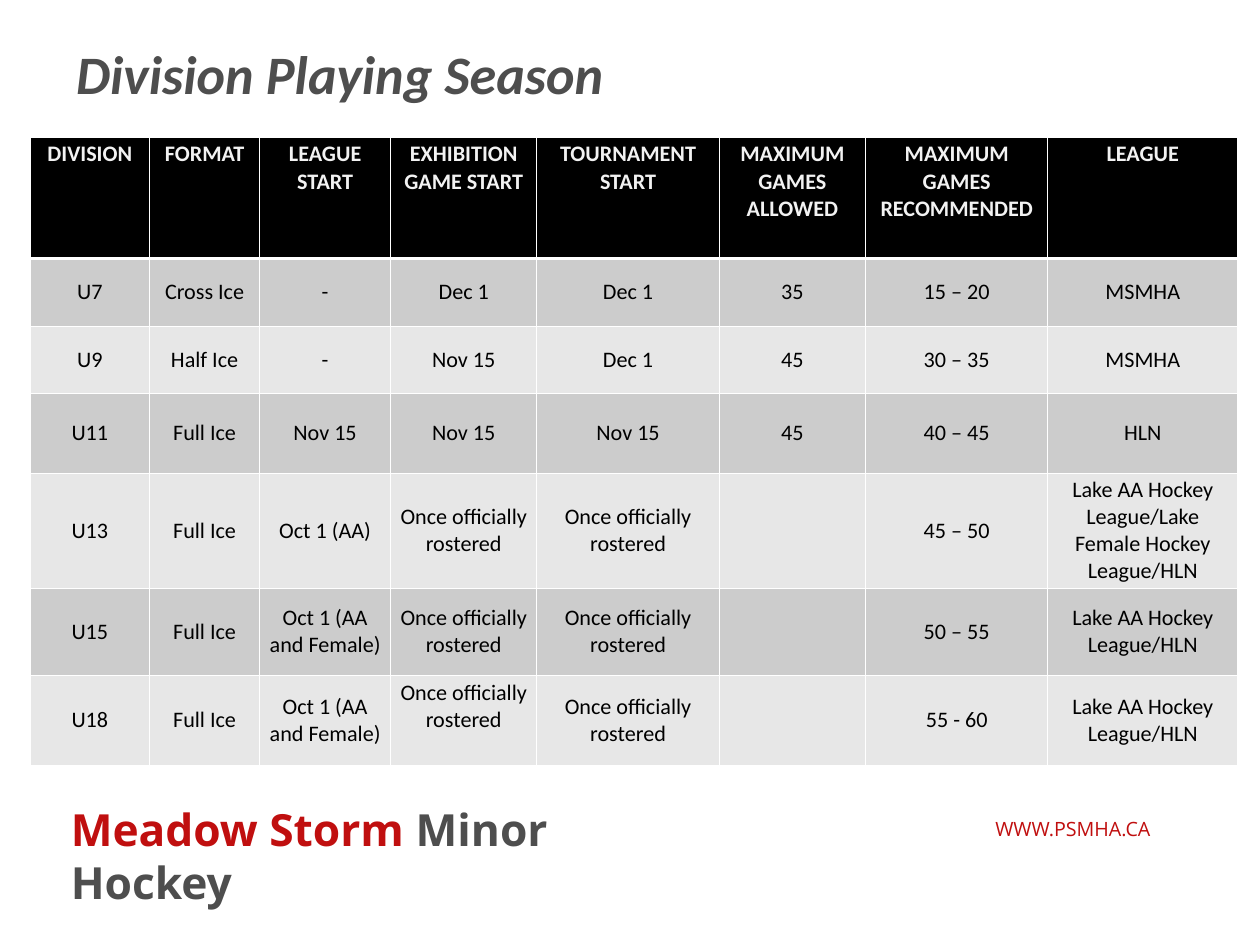
from lxml.etree import SubElement
from pptx import Presentation
from pptx.dml.color import RGBColor
from pptx.enum.text import MSO_ANCHOR as Anchor, MSO_AUTO_SIZE as AutoSize, PP_ALIGN as Align
from pptx.oxml.ns import qn
from pptx.util import Cm, Pt

WHITE = RGBColor(0xFF, 0xFF, 0xFF)
BLACK = RGBColor(0x00, 0x00, 0x00)
OFF_WHITE = RGBColor(0xF2, 0xF2, 0xF2)
DARK_GREY = RGBColor(0x4E, 0x4E, 0x4E)
RED = RGBColor(0xC0, 0x0F, 0x0F)
BANDS = [RGBColor(0xCC, 0xCC, 0xCC), RGBColor(0xE7, 0xE7, 0xE7)]


def add_run(paragraph, text, font_name, size, color, bold=False, italic=False):
    run = paragraph.add_run()
    run.text = text
    run.font.name = font_name
    run.font.size = Pt(size)
    run.font.color.rgb = color
    run.font.bold = bold
    run.font.italic = italic


def set_border(cell, side, width):
    """Draw a white line on one side of a cell: lnL, lnR, lnT or lnB."""
    line = SubElement(cell._tc.get_or_add_tcPr(), qn(f"a:{side}"), w=str(Pt(width)))
    fill = SubElement(line, qn("a:solidFill"))
    SubElement(fill, qn("a:srgbClr"), val=str(WHITE))


prs = Presentation()
prs.slide_width, prs.slide_height = Cm(36.12), Cm(27.1)
slide = prs.slides.add_slide(prs.slide_layouts[6])

# Title and footer: left, top, width, height, alignment, runs
captions = [
    (1.93, 1.04, 32.33, 2.13, Align.LEFT,
     [("Division Playing Season", "Calibri", 44, DARK_GREY, True, True)]),
    (1.78, 22.89, 18.85, 1.8, Align.LEFT,
     [("Meadow Storm ", "Open Sans", 36, RED, True),
      ("Minor Hockey", "Open Sans", 36, DARK_GREY, True)]),
    (27.79, 23.29, 5.44, 0.94, Align.RIGHT,
     [("WWW.PSMHA.CA", "Open Sans", 16, RED)]),
]
for left, top, width, height, align, runs in captions:
    frame = slide.shapes.add_textbox(Cm(left), Cm(top), Cm(width), Cm(height)).text_frame
    frame.word_wrap = True
    frame.auto_size = AutoSize.SHAPE_TO_FIT_TEXT
    frame.paragraphs[0].alignment = align
    for run in runs:
        add_run(frame.paragraphs[0], *run)

# Season table
ROSTERED = "Once officially rostered"
seasons = [
    ["DIVISION", "FORMAT", "LEAGUE START", "EXHIBITION GAME START", "TOURNAMENT START",
     "MAXIMUM GAMES ALLOWED", "MAXIMUM GAMES RECOMMENDED", "LEAGUE"],
    ["U7", "Cross Ice", "-", "Dec 1", "Dec 1", "35", "15 – 20", "MSMHA"],
    ["U9", "Half Ice", "-", "Nov 15", "Dec 1", "45", "30 – 35", "MSMHA"],
    ["U11", "Full Ice", "Nov 15", "Nov 15", "Nov 15", "45", "40 – 45", "HLN"],
    ["U13", "Full Ice", "Oct 1 (AA)", ROSTERED, ROSTERED, "", "45 – 50",
     "Lake AA Hockey League/Lake Female Hockey League/HLN"],
    ["U15", "Full Ice", "Oct 1 (AA and Female)", ROSTERED, ROSTERED, "", "50 – 55",
     "Lake AA Hockey League/HLN"],
    ["U18", "Full Ice", "Oct 1 (AA and Female)", ROSTERED, ROSTERED, "", "55 - 60",
     "Lake AA Hockey League/HLN"],
]
column_widths = [3.43, 3.15, 3.76, 4.19, 5.23, 4.19, 5.23, 5.44]
row_heights = [3.48, 1.93, 1.93, 2.29, 3.3, 2.49, 2.59]

table = slide.shapes.add_table(
    len(row_heights), len(column_widths), Cm(0.86), Cm(3.94),
    Cm(sum(column_widths)), Cm(sum(row_heights))).table
for column, width in zip(table.columns, column_widths):
    column.width = Cm(width)
for row, height in zip(table.rows, row_heights):
    row.height = Cm(height)

for row_index, season in enumerate(seasons):
    is_header = row_index == 0
    for column_index, text in enumerate(season):
        cell = table.cell(row_index, column_index)
        cell.margin_top = cell.margin_bottom = Cm(0.1)
        cell.vertical_anchor = Anchor.TOP if is_header else Anchor.MIDDLE
        set_border(cell, "lnL", 1)
        set_border(cell, "lnR", 1)
        set_border(cell, "lnT", 3 if row_index == 1 else 1)
        set_border(cell, "lnB", 3 if is_header else 1)
        cell.fill.solid()
        cell.fill.fore_color.rgb = BLACK if is_header else BANDS[(row_index - 1) % 2]
        paragraph = cell.text_frame.paragraphs[0]
        paragraph.alignment = Align.CENTER
        if text:
            add_run(paragraph, text, "Calibri", 18, OFF_WHITE if is_header else BLACK, is_header)

# The U18 exhibition start sits one half line above the middle of its row
table.cell(6, 3).margin_bottom = Cm(0.87)

prs.save("out.pptx")
